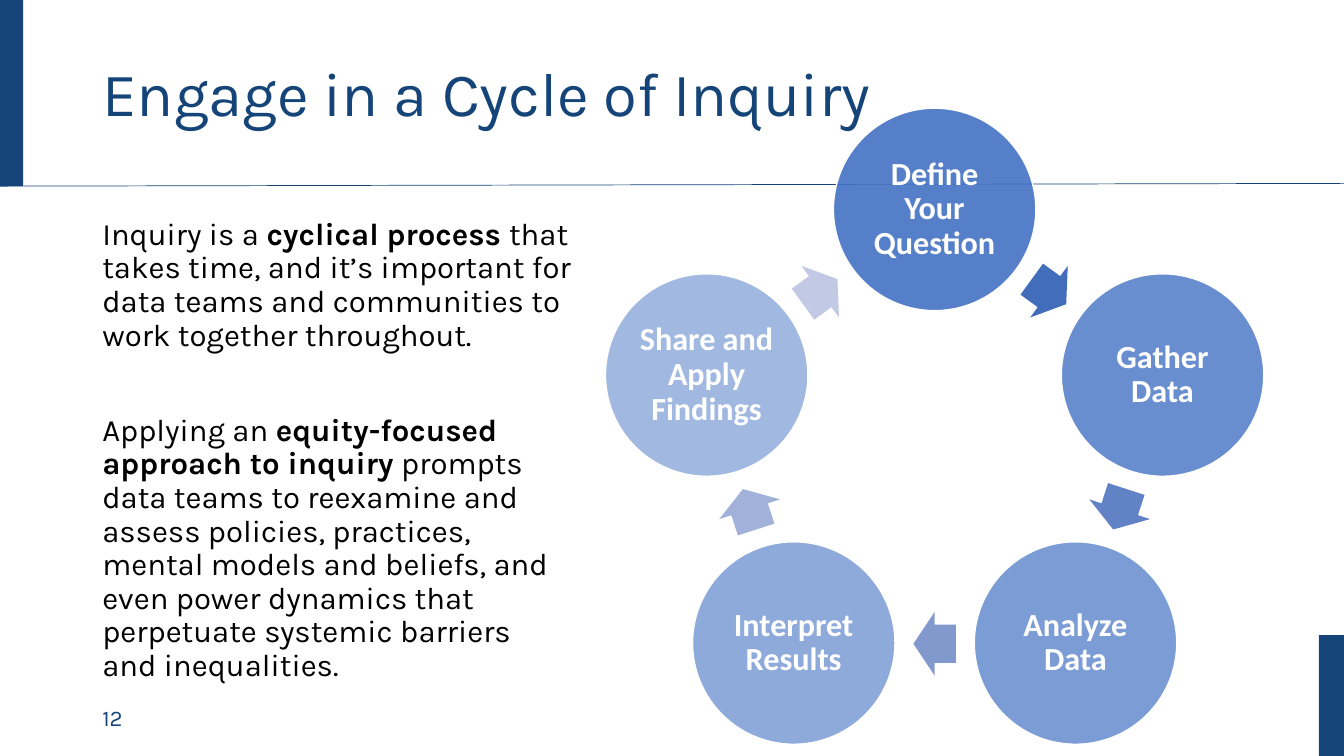
from dataclasses import dataclass
from math import cos, radians, sin

from lxml.etree import SubElement
from pptx import Presentation
from pptx.dml.color import RGBColor
from pptx.enum.shapes import MSO_CONNECTOR, MSO_SHAPE
from pptx.enum.text import MSO_ANCHOR, PP_ALIGN
from pptx.oxml.ns import qn
from pptx.util import Pt


@dataclass(frozen=True)
class Theme:
    navy: str = "154578"
    stage_blue: str = "4472C4"
    white: str = "FFFFFF"
    black: str = "000000"
    arrow_blues: tuple = ("416DBB", "6182C5", "8299CE", "A2B1D9", "C1C9E4")
    heading_font: str = "Karla"
    stage_font: str = "Calibri"
    title_size: float = 44
    body_size: float = 22.2
    stage_size: float = 23
    number_size: float = 16


theme = Theme()


def add_filled(kind, left, top, width, height, color):
    shape = slide.shapes.add_shape(kind, Pt(left), Pt(top), Pt(width), Pt(height))
    shape.shadow.inherit = False
    shape.fill.solid()
    shape.fill.fore_color.rgb = RGBColor.from_string(color)
    shape.line.fill.background()
    return shape


def add_run(paragraph, text, font, size, color, bold=False):
    run = paragraph.add_run()
    run.text = text
    run.font.name = font
    run.font.size = Pt(size)
    run.font.bold = bold
    run.font.color.rgb = RGBColor.from_string(color)


presentation = Presentation()
presentation.slide_width = Pt(960)
presentation.slide_height = Pt(540)
slide = presentation.slides.add_slide(presentation.slide_layouts[6])

add_filled(MSO_SHAPE.RECTANGLE, -1.5, 0, 18, 133, theme.navy)
add_filled(MSO_SHAPE.RECTANGLE, 942, 453.6, 18, 86.4, theme.navy)
header_rule = slide.shapes.add_connector(
    MSO_CONNECTOR.STRAIGHT, Pt(-1.5), Pt(133), Pt(960), Pt(131)
)
header_rule.line.color.rgb = RGBColor.from_string(theme.navy)
header_rule.line.width = Pt(0.5)
SubElement(header_rule._element.spPr, qn("a:effectLst"))

headings = [
    ("Engage in a Cycle of Inquiry", 16.5, 828, 104.4, theme.title_size, 0.9),
    ("12", 498.2, 216, 28.8, theme.number_size, 1.0),
]
for wording, top, width, height, size, spacing in headings:
    heading = slide.shapes.add_textbox(Pt(66), Pt(top), Pt(width), Pt(height)).text_frame
    heading.word_wrap = True
    heading.vertical_anchor = MSO_ANCHOR.MIDDLE
    heading.paragraphs[0].line_spacing = spacing
    add_run(heading.paragraphs[0], wording, theme.heading_font, size, theme.navy)

explanation = [
    [
        ("Inquiry is a ", False),
        ("cyclical process ", True),
        ("that takes time, and it’s important for data teams and communities "
         "to work together throughout.", False),
    ],
    [
        ("Applying an ", False),
        ("equity-focused approach to inquiry", True),
        (" prompts data teams to reexamine and assess policies, practices, "
         "mental models and beliefs, and even power dynamics that perpetuate "
         "systemic barriers and inequalities.", False),
    ],
]
body = slide.shapes.add_textbox(Pt(66), Pt(152.6), Pt(350), Pt(345.6)).text_frame
body.word_wrap = True
for index, passages in enumerate(explanation):
    paragraph = body.add_paragraph() if index else body.paragraphs[0]
    paragraph.line_spacing = 0.9
    if index:
        paragraph.space_before = Pt(44)
    for wording, bold in passages:
        add_run(paragraph, wording, theme.heading_font, theme.body_size, theme.black, bold)

stages = [
    "Define Your Question",
    "Gather Data",
    "Analyze Data",
    "Interpret Results",
    "Share and Apply Findings",
]
center_x, center_y = 667.6, 320.8
stage_radius, arrow_radius = 171.2, 139
diameter = 144.6
arrow_length, arrow_height = 30.4, 45.6
step = 360 / len(stages)

for index, stage in enumerate(stages):
    angle = radians(index * step)
    circle = add_filled(
        MSO_SHAPE.OVAL,
        center_x + stage_radius * sin(angle) - diameter / 2,
        center_y - stage_radius * cos(angle) - diameter / 2,
        diameter, diameter, theme.stage_blue,
    )
    opacity = SubElement(circle.fill._xPr.find(".//" + qn("a:srgbClr")), qn("a:alpha"))
    opacity.set("val", str(90000 - index * 10000))
    circle.line.color.rgb = RGBColor.from_string(theme.white)
    circle.line.width = Pt(1)
    label = circle.text_frame
    label.word_wrap = True
    label.vertical_anchor = MSO_ANCHOR.MIDDLE
    label.margin_left = label.margin_right = Pt(2.3)
    label.margin_top = label.margin_bottom = Pt(2.3)
    label.paragraphs[0].alignment = PP_ALIGN.CENTER
    label.paragraphs[0].line_spacing = 0.9
    add_run(label.paragraphs[0], stage, theme.stage_font, theme.stage_size, theme.white, True)

    turn = (index + 0.5) * step
    arrow = add_filled(
        MSO_SHAPE.RIGHT_ARROW,
        center_x + arrow_radius * sin(radians(turn)) - arrow_length / 2,
        center_y - arrow_radius * cos(radians(turn)) - arrow_height / 2,
        arrow_length, arrow_height, theme.arrow_blues[index],
    )
    arrow.adjustments[0] = 0.6
    arrow.adjustments[1] = 0.5
    arrow.rotation = turn

presentation.save("out.pptx")
